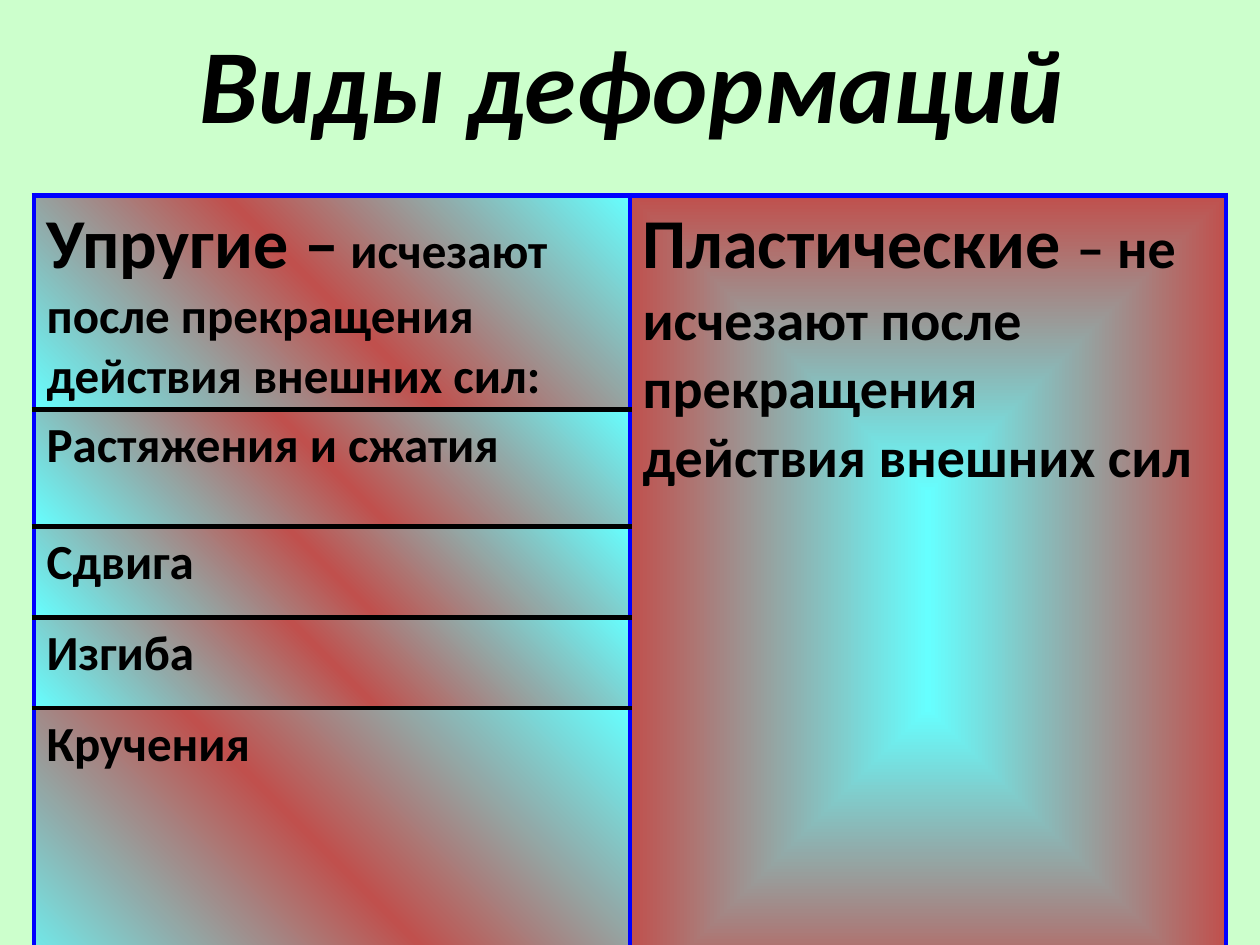
from typing import NamedTuple

from lxml.etree import SubElement
from pptx import Presentation
from pptx.dml.color import RGBColor
from pptx.enum.text import MSO_ANCHOR, PP_ALIGN
from pptx.oxml.ns import qn
from pptx.util import Inches, Pt

FONT = "Calibri"
COLORS = {
    "background": "CCFFCC",
    "text": "000000",
    "frame": "0000FF",
    "rule": "000000",
    "aqua": "66FFFF",
    "red": "C0504D",
}


class Run(NamedTuple):
    text: str
    size: int


ELASTIC = [
    [Run("Упругие –", 40),
     Run(" исчезают после прекращения действия внешних сил:", 28)],
    [Run("Растяжения и сжатия", 28)],
    [Run("Сдвига", 28)],
    [Run("Изгиба", 28)],
    [Run("Кручения", 28)],
]
PLASTIC = [
    Run("Пластические ", 40),
    Run("– не исчезают после прекращения действия внешних сил", 32),
]
ROW_HEIGHTS = [1.09, 0.93, 0.72, 0.72, 0.72]
COL_WIDTH = 4.73
DIAGONAL_STOPS = [(0, "aqua"), (50, "red"), (100, "aqua")]
CENTRE_STOPS = [(0, "aqua"), (100, "red")]


def write(p, runs: list[Run], italic: bool = False) -> None:
    for run in runs:
        r = p.add_run()
        r.text = run.text
        r.font.name = FONT
        r.font.size = Pt(run.size)
        r.font.bold = True
        r.font.italic = italic
        r.font.color.rgb = RGBColor.from_string(COLORS["text"])


def add_color(parent, name: str) -> None:
    SubElement(parent, qn("a:srgbClr"), val=COLORS[name])


def set_borders(cell, top: str, bottom: str) -> None:
    tc_pr = cell._tc.get_or_add_tcPr()
    sides = {"L": "frame", "R": "frame", "T": top, "B": bottom}
    for side, color in sides.items():
        ln = SubElement(tc_pr, qn(f"a:ln{side}"), w=str(Pt(3)))
        add_color(SubElement(ln, qn("a:solidFill")), color)


def set_gradient(cell, stops: list[tuple[int, str]], centred: bool) -> None:
    grad = SubElement(cell._tc.get_or_add_tcPr(), qn("a:gradFill"), rotWithShape="1")
    gs_list = SubElement(grad, qn("a:gsLst"))
    for pos, color in stops:
        add_color(SubElement(gs_list, qn("a:gs"), pos=str(pos * 1000)), color)
    if centred:
        path = SubElement(grad, qn("a:path"), {"path": "shape"})
        SubElement(path, qn("a:fillToRect"), {side: "50000" for side in "ltrb"})
    else:
        SubElement(grad, qn("a:lin"), ang=str(315 * 60000), scaled="1")


def add_title(slide, text: str) -> None:
    sp = slide.shapes.add_textbox(Inches(0.51), Inches(0), Inches(9), Inches(1.29))
    tf = sp.text_frame
    tf.word_wrap = True
    tf.vertical_anchor = MSO_ANCHOR.MIDDLE
    p = tf.paragraphs[0]
    p.alignment = PP_ALIGN.CENTER
    write(p, [Run(text, 60)], italic=True)


def add_deformation_table(slide) -> None:
    rows = len(ROW_HEIGHTS)
    frame = slide.shapes.add_table(
        rows, 2, Inches(0.27), Inches(1.55), Inches(2 * COL_WIDTH), Inches(4.78))
    table = frame.table
    table.first_row = table.horz_banding = False
    for col in table.columns:
        col.width = Inches(COL_WIDTH)
    for row, height in zip(table.rows, ROW_HEIGHTS):
        row.height = Inches(height)
    frame.height = Inches(4.78)

    # Left column: elastic kinds, ruled in black inside a blue frame
    for i, runs in enumerate(ELASTIC):
        cell = table.cell(i, 0)
        write(cell.text_frame.paragraphs[0], runs)
        set_borders(cell, "rule" if i else "frame",
                    "rule" if i < rows - 1 else "frame")
        set_gradient(cell, DIAGONAL_STOPS, centred=False)

    # Right column: one merged cell
    table.cell(0, 1).merge(table.cell(rows - 1, 1))
    write(table.cell(0, 1).text_frame.paragraphs[0], PLASTIC)
    for i in range(rows):
        cell = table.cell(i, 1)
        set_borders(cell, "frame", "frame")
        set_gradient(cell, CENTRE_STOPS, centred=True)


def main() -> None:
    prs = Presentation()
    prs.slide_width, prs.slide_height = Inches(10), Inches(7.5)
    slide = prs.slides.add_slide(prs.slide_layouts[6])
    fill = slide.background.fill
    fill.solid()
    fill.fore_color.rgb = RGBColor.from_string(COLORS["background"])
    add_title(slide, "Виды деформаций")
    add_deformation_table(slide)
    prs.save("out.pptx")


if __name__ == "__main__":
    main()
